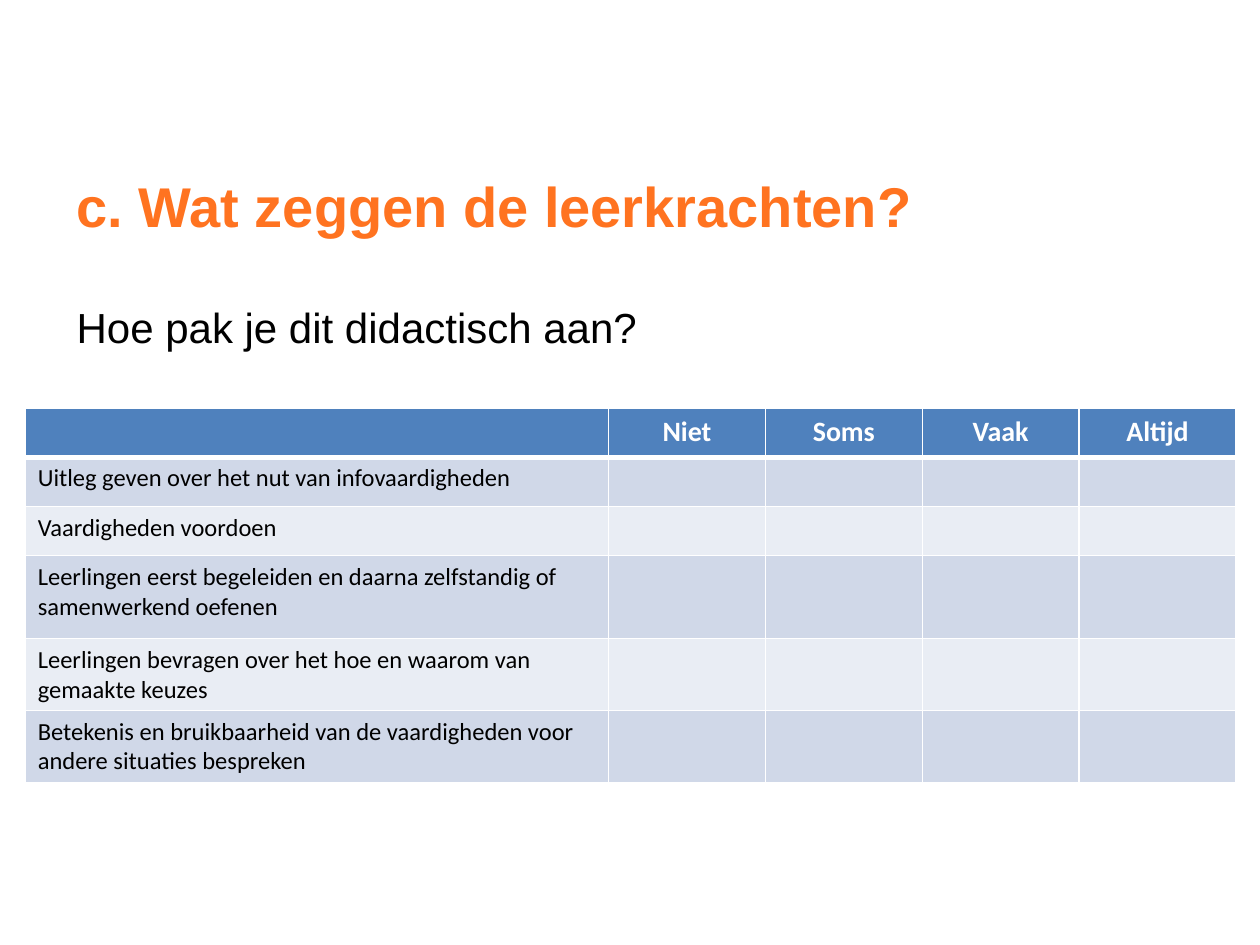
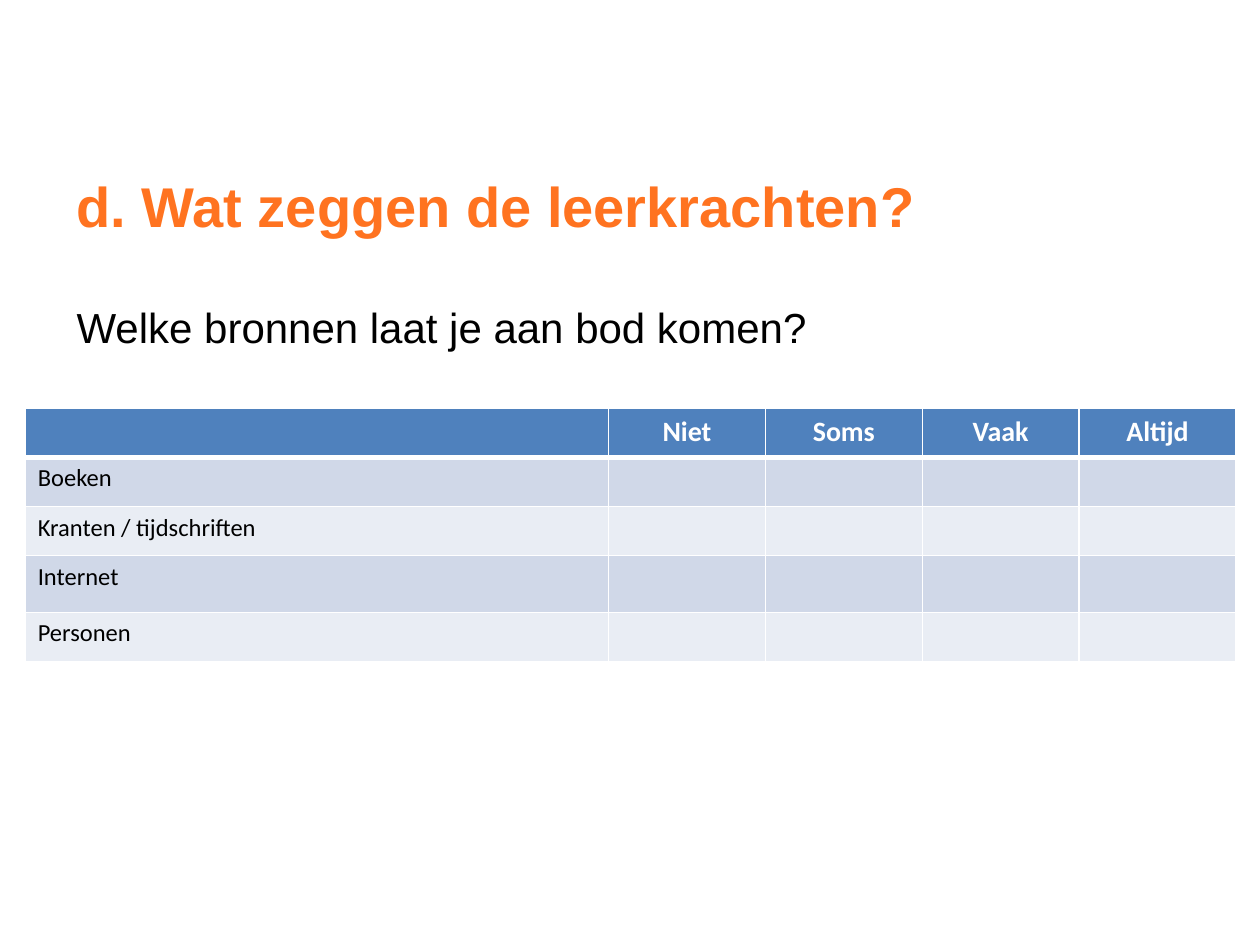
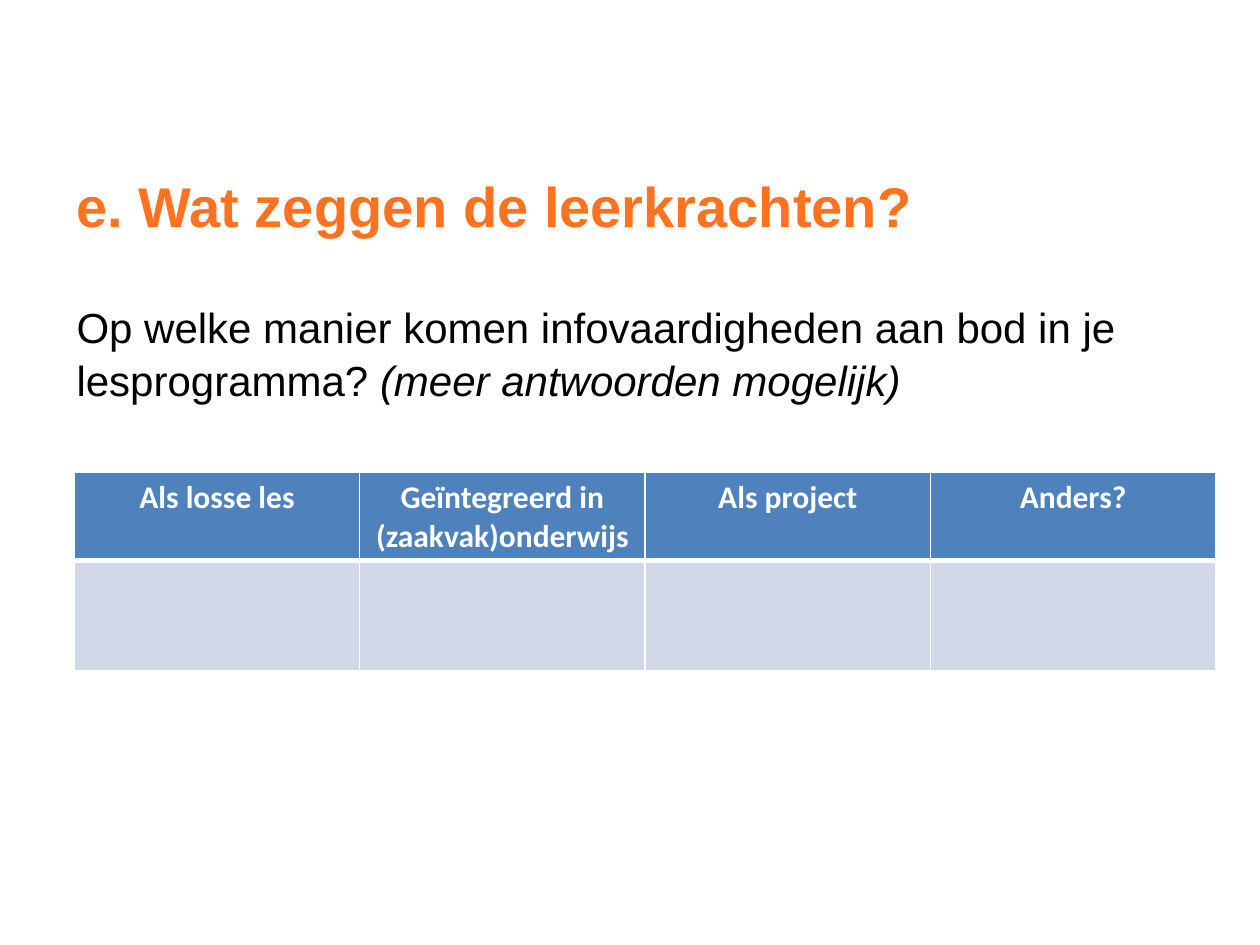
from lxml.etree import SubElement
from pptx import Presentation
from pptx.dml.color import RGBColor
from pptx.enum.text import MSO_ANCHOR, PP_ALIGN
from pptx.oxml.ns import qn
from pptx.util import Inches, Pt

ORANGE, BLACK, WHITE = "FF7320", "000000", "FFFFFF"
HEADER_BLUE = "4F81BD"
BANDS = ("D0D8E8", "E9EDF4")

# Content: each survey question with its answer grid
FREQUENCIES = ["", "Niet", "Soms", "Vaak", "Altijd"]
FREQUENCY_GRID = dict(left=0.2, top=3.24, width=9.61, first_col=4.63,
                      header=FREQUENCIES, header_size=16)

QUESTIONS = [
    dict(
        title="c. Wat zeggen de leerkrachten?",
        question=[("Hoe pak je dit didactisch aan?", False)],
        grid=dict(
            FREQUENCY_GRID,
            labels=[
                "Uitleg geven over het nut van infovaardigheden",
                "Vaardigheden voordoen",
                "Leerlingen eerst begeleiden en daarna zelfstandig of samenwerkend oefenen",
                "Leerlingen bevragen over het hoe en waarom van gemaakte keuzes",
                "Betekenis en bruikbaarheid van de vaardigheden voor andere situaties bespreken",
            ],
            heights=[0.39, 0.39, 0.39, 0.66, 0.57, 0.57],
        ),
    ),
    dict(
        title="d. Wat zeggen de leerkrachten?",
        question=[("Welke bronnen laat je aan bod komen?", False)],
        grid=dict(
            FREQUENCY_GRID,
            labels=["Boeken", "Kranten / tijdschriften", "Internet", "Personen"],
            heights=[0.39, 0.39, 0.39, 0.45, 0.39],
        ),
    ),
    dict(
        title="e. Wat zeggen de leerkrachten?",
        question=[
            ("Op welke manier komen infovaardigheden aan bod in je lesprogramma? ", False),
            ("(meer antwoorden mogelijk)", True),
        ],
        grid=dict(
            left=0.59, top=3.75, width=9.06, first_col=2.265, header_size=18,
            header=["Als losse les", "Geïntegreerd in (zaakvak)onderwijs",
                    "Als project", "Anders?"],
            labels=[""],
            heights=[0.7, 0.87],
        ),
    ),
]


def rgb(color):
    return RGBColor.from_string(color)


def add_run(paragraph, text, font, size, color, bold=False, italic=False):
    run = paragraph.add_run()
    run.text = text
    run.font.name = font
    run.font.size = Pt(size)
    run.font.color.rgb = rgb(color)
    run.font.bold = bold
    run.font.italic = italic


def add_text_area(slide, top, height, anchor):
    """Add a text area in the shared column and return its first paragraph."""
    frame = slide.shapes.add_textbox(
        Inches(0.51), Inches(top), Inches(9), Inches(height)).text_frame
    frame.word_wrap = True
    frame.vertical_anchor = anchor
    return frame.paragraphs[0]


def set_borders(cell, top, bottom):
    properties = cell._tc.get_or_add_tcPr()
    for side, points in (("L", 1), ("R", 1), ("T", top), ("B", bottom)):
        line = SubElement(properties, qn(f"a:ln{side}"), w=str(Pt(points)))
        fill = SubElement(line, qn("a:solidFill"))
        SubElement(fill, qn("a:srgbClr"), val=WHITE)


def fill_cell(cell, text, row, header_size):
    is_header = row == 0
    set_borders(cell, top=3 if row == 1 else 1, bottom=3 if is_header else 1)
    cell.fill.solid()
    cell.fill.fore_color.rgb = rgb(HEADER_BLUE if is_header else BANDS[(row - 1) % 2])
    paragraph = cell.text_frame.paragraphs[0]
    size = header_size if is_header else 14
    if is_header:
        paragraph.alignment = PP_ALIGN.CENTER
    if text:
        add_run(paragraph, text, "Calibri", size,
                WHITE if is_header else BLACK, bold=is_header)
    else:
        # Keep empty cells from stretching their row
        SubElement(paragraph._p, qn("a:endParaRPr"), sz=str(size * 100))


def add_answer_grid(slide, grid):
    header, heights = grid["header"], grid["heights"]
    columns = len(header)
    rows = [header] + [[label] + [""] * (columns - 1) for label in grid["labels"]]
    table = slide.shapes.add_table(
        len(rows), columns, Inches(grid["left"]), Inches(grid["top"]),
        Inches(grid["width"]), Inches(sum(heights))).table
    table.horz_banding = False

    # The answer columns share what the first column leaves
    answer_width = (grid["width"] - grid["first_col"]) / (columns - 1)
    for index, column in enumerate(table.columns):
        column.width = Inches(answer_width if index else grid["first_col"])
    for row, (texts, height) in enumerate(zip(rows, heights)):
        table.rows[row].height = Inches(height)
        for column, text in enumerate(texts):
            fill_cell(table.cell(row, column), text, row, grid["header_size"])


def add_question_slide(deck, content):
    slide = deck.slides.add_slide(deck.slide_layouts[6])

    # Title
    title = add_text_area(slide, 1, 1.25, MSO_ANCHOR.MIDDLE)
    add_run(title, content["title"], "Arial", 32, ORANGE, bold=True)

    # Question
    question = add_text_area(slide, 2.32, 4.1, MSO_ANCHOR.TOP)
    question.line_spacing = 1.06
    for text, italic in content["question"]:
        add_run(question, text, "Arial", 24, BLACK, italic=italic)

    # Answers
    add_answer_grid(slide, content["grid"])


def main():
    deck = Presentation()
    deck.slide_width, deck.slide_height = Inches(10), Inches(7.5)
    for content in QUESTIONS:
        add_question_slide(deck, content)
    deck.save("out.pptx")


if __name__ == "__main__":
    main()
